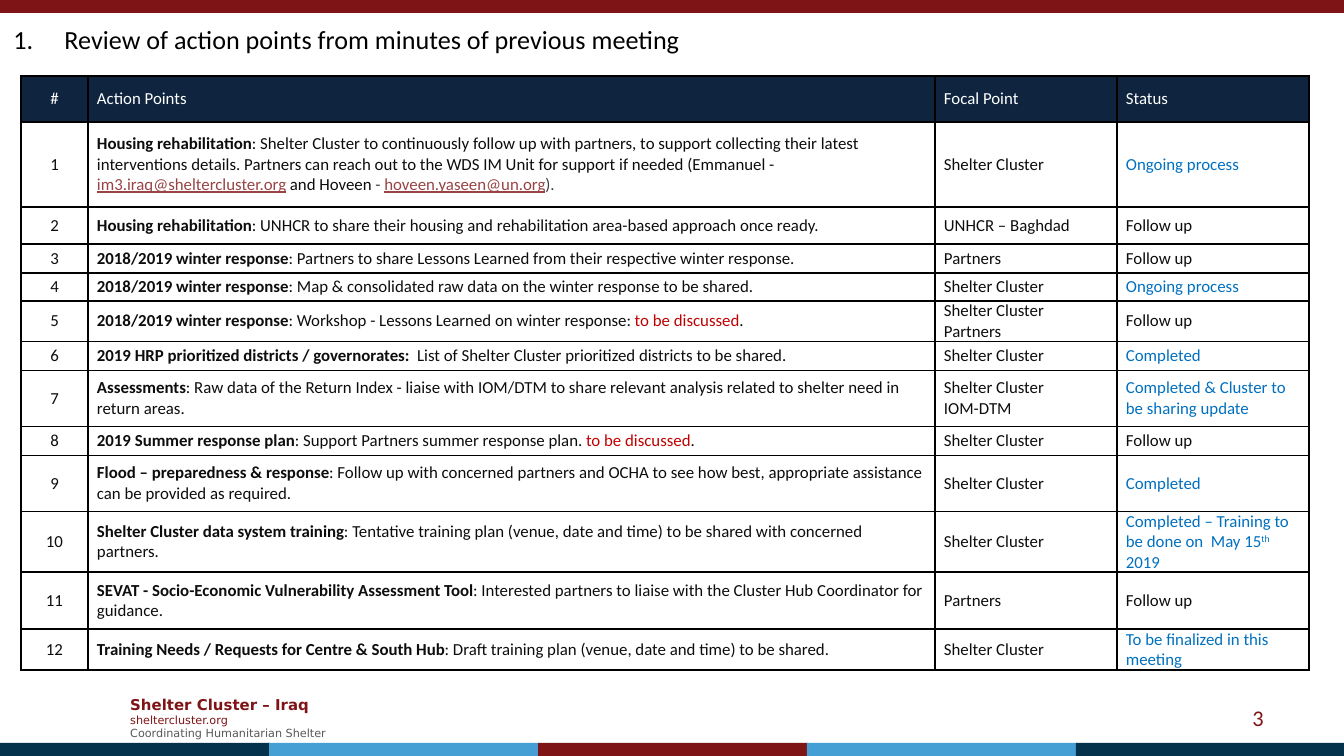
from lxml.etree import SubElement
from pptx import Presentation
from pptx.dml.color import RGBColor
from pptx.enum.shapes import MSO_SHAPE as Shape
from pptx.enum.text import MSO_ANCHOR as Anchor, MSO_AUTO_SIZE as AutoSize, PP_ALIGN as Align
from pptx.oxml.ns import qn
from pptx.util import Pt

EMU_PER_PX = 914400 / 134.4
MAROON, NAVY, SKY, HEADER = "7F1416", "04314C", "459FD5", "0F243E"
BLACK, WHITE, INK, GREY = "000000", "FFFFFF", "0D0D0D", "404040"
BLUE, RED, LINK, FOOTER_GREY = "0070C0", "C00000", "994345", "595959"

COLUMN_WIDTHS = [67, 847, 182, 192]
ROW_HEIGHTS = [46, 85, 37, 29, 28, 40, 29, 56, 29, 56, 61, 57, 40]
HEADINGS = ["#", "Action Points", "Focal Point", "Status"]

HOUSING = "Housing rehabilitation"
WINTER = "2018/2019 winter response"
CLUSTER = ["Shelter Cluster"]
FOLLOW_UP = [("Follow up", INK)]
ONGOING = [("Ongoing process", BLUE)]
COMPLETED = [("Completed", BLUE)]
TO_DISCUSS = [("to be discussed", RED), (".", INK)]

# Topic, runs of the action, focal points, runs of the status
ACTIONS = [
    (HOUSING,
     [(": Shelter Cluster to continuously follow up with partners, to support collecting their "
       "latest interventions details. Partners can reach out to the WDS IM Unit for support if "
       "needed (Emmanuel - ", INK),
      ("im3.iraq@sheltercluster.org", LINK, "underline"), (" ", GREY), ("and Hoveen ", INK),
      ("- ", GREY), ("hoveen.yaseen@un.org", LINK, "underline"), (").", GREY)],
     CLUSTER, ONGOING),
    (HOUSING,
     [(": UNHCR to share their housing and rehabilitation area-based approach once ready.", INK)],
     ["UNHCR – Baghdad"], FOLLOW_UP),
    (WINTER,
     [(": Partners to share Lessons Learned from their respective winter response.", INK)],
     ["Partners"], FOLLOW_UP),
    (WINTER, [(": Map & consolidated raw data on the winter response to be shared.", INK)],
     CLUSTER, ONGOING),
    (WINTER, [(": Workshop - Lessons Learned on winter response: ", INK), *TO_DISCUSS],
     ["Shelter Cluster", "Partners"], FOLLOW_UP),
    ("2019 HRP prioritized districts / governorates: ",
     [(" List of Shelter Cluster prioritized districts to be shared.", INK)],
     CLUSTER, COMPLETED),
    ("Assessments",
     [(": Raw data of the Return Index - liaise with IOM/DTM to share relevant analysis related "
       "to shelter need in return areas.", INK)],
     ["Shelter Cluster", "IOM-DTM"], [("Completed & Cluster to be sharing update", BLUE)]),
    ("2019 Summer response plan",
     [(": Support Partners summer response plan. ", INK), *TO_DISCUSS],
     CLUSTER, FOLLOW_UP),
    ("Flood – preparedness & response",
     [(": Follow up with concerned partners and OCHA to see how best, appropriate assistance "
       "can be provided as required.", INK)],
     CLUSTER, COMPLETED),
    ("Shelter Cluster data system training",
     [(": Tentative training plan (venue, date and time) to be shared with concerned partners.",
       INK)],
     CLUSTER,
     [("Completed – Training to be done on  May 15", BLUE), ("th", BLUE, "superscript"),
      (" 2019", BLUE)]),
    ("SEVAT - Socio-Economic Vulnerability Assessment Tool",
     [(": Interested partners to liaise with the Cluster Hub Coordinator for guidance.", INK)],
     ["Partners"], FOLLOW_UP),
    ("Training Needs / Requests for Centre & South Hub",
     [(": Draft training plan (venue, date and time) to be shared.", INK)],
     CLUSTER, [("To be finalized in this meeting", BLUE)]),
]


def px(length):
    return round(length * EMU_PER_PX)


def color(hex_text):
    return RGBColor.from_string(hex_text)


def add_run(paragraph, text, hex_color, style="", size=9, font_name="Calibri"):
    run = paragraph.add_run()
    run.text = text
    font = run.font
    font.name, font.size = font_name, Pt(size)
    font.bold = style == "bold"
    font.underline = style == "underline"
    font.color.rgb = color(hex_color)
    if style == "superscript":
        run._r.get_or_add_rPr().set("baseline", "30000")


def add_paragraphs(text_frame, paragraphs, alignment=Align.LEFT):
    """Write one paragraph for each list of add_run arguments."""
    for index, runs in enumerate(paragraphs):
        paragraph = text_frame.add_paragraph() if index else text_frame.paragraphs[0]
        paragraph.alignment = alignment
        for run in runs:
            add_run(paragraph, *run)


def add_bar(slide, left, top, width, hex_color):
    bar = slide.shapes.add_shape(Shape.RECTANGLE, px(left), px(top), px(width), px(13))
    bar.shadow.inherit = False
    bar.fill.solid()
    bar.fill.fore_color.rgb = color(hex_color)
    bar.line.fill.background()


def add_text(slide, box, paragraphs, alignment=Align.LEFT):
    text_frame = slide.shapes.add_textbox(*map(px, box)).text_frame
    text_frame.word_wrap = True
    text_frame.vertical_anchor = Anchor.MIDDLE
    add_paragraphs(text_frame, paragraphs, alignment)


def set_numbered_title(slide, text):
    title = slide.shapes.title
    title.left, title.top, title.width, title.height = map(px, (0, 17, 1344, 44))
    text_frame = title.text_frame
    text_frame.auto_size = AutoSize.NONE
    text_frame.vertical_anchor = Anchor.MIDDLE
    paragraph = text_frame.paragraphs[0]
    properties = paragraph._p.get_or_add_pPr()
    properties.set("marL", str(px(51)))
    properties.set("indent", str(px(-51)))
    SubElement(properties, qn("a:buFont"), typeface="+mj-lt")
    SubElement(properties, qn("a:buAutoNum"), type="arabicPeriod")
    paragraph.alignment = Align.LEFT
    add_run(paragraph, text, BLACK, size=14)


def add_borders(cell):
    properties = cell._tc.get_or_add_tcPr()
    for side in ("lnL", "lnR", "lnT", "lnB"):
        line = SubElement(properties, qn(f"a:{side}"), w=str(Pt(1)))
        SubElement(SubElement(line, qn("a:solidFill")), qn("a:srgbClr"), val=BLACK)


def fill_cell(cell, paragraphs, alignment, fill=None):
    cell.margin_left = cell.margin_right = px(9)
    cell.margin_top = cell.margin_bottom = 0
    cell.vertical_anchor = Anchor.MIDDLE
    add_borders(cell)
    if fill:
        cell.fill.solid()
        cell.fill.fore_color.rgb = color(fill)
    else:
        cell.fill.background()
    add_paragraphs(cell.text_frame, paragraphs, alignment)


def add_action_table(slide):
    rows = [[[[(heading, WHITE)]] for heading in HEADINGS]]
    for number, (topic, action, focal_points, status) in enumerate(ACTIONS, 1):
        rows.append([
            [[(str(number), INK)]],
            [[(topic, INK, "bold"), *action]],
            [[(focal_point, INK)] for focal_point in focal_points],
            [status],
        ])
    box = (21, 76, sum(COLUMN_WIDTHS), sum(ROW_HEIGHTS))
    table = slide.shapes.add_table(len(rows), len(HEADINGS), *map(px, box)).table
    table.horz_banding = False
    for column, width in zip(table.columns, COLUMN_WIDTHS):
        column.width = px(width)
    for row_index, row in enumerate(rows):
        table.rows[row_index].height = px(ROW_HEIGHTS[row_index])
        for column_index, paragraphs in enumerate(row):
            fill_cell(table.cell(row_index, column_index), paragraphs,
                      Align.LEFT if column_index else Align.CENTER,
                      None if row_index else HEADER)


def main():
    presentation = Presentation()
    presentation.slide_width, presentation.slide_height = px(1344), px(756)
    slide = presentation.slides.add_slide(presentation.slide_layouts[5])

    add_text(slide, (117, 688, 233, 59), [
        [("Shelter Cluster – Iraq", MAROON, "bold", 8, "DejaVu Sans")],
        [("sheltercluster.org", MAROON, "", 6, "DejaVu Sans")],
        [("Coordinating Humanitarian Shelter", FOOTER_GREY, "", 6, "DejaVu Sans")],
    ])
    add_bar(slide, 0, 0, 1344, MAROON)
    for index, hex_color in enumerate([NAVY, SKY, MAROON, SKY, NAVY]):
        add_bar(slide, index * 269, 743, 270, hex_color)
    add_text(slide, (964, 698, 313, 40), [[("3", MAROON, "", 12)]], Align.RIGHT)
    set_numbered_title(slide, "Review of action points from minutes of previous meeting")
    add_action_table(slide)

    presentation.save("out.pptx")


if __name__ == "__main__":
    main()
